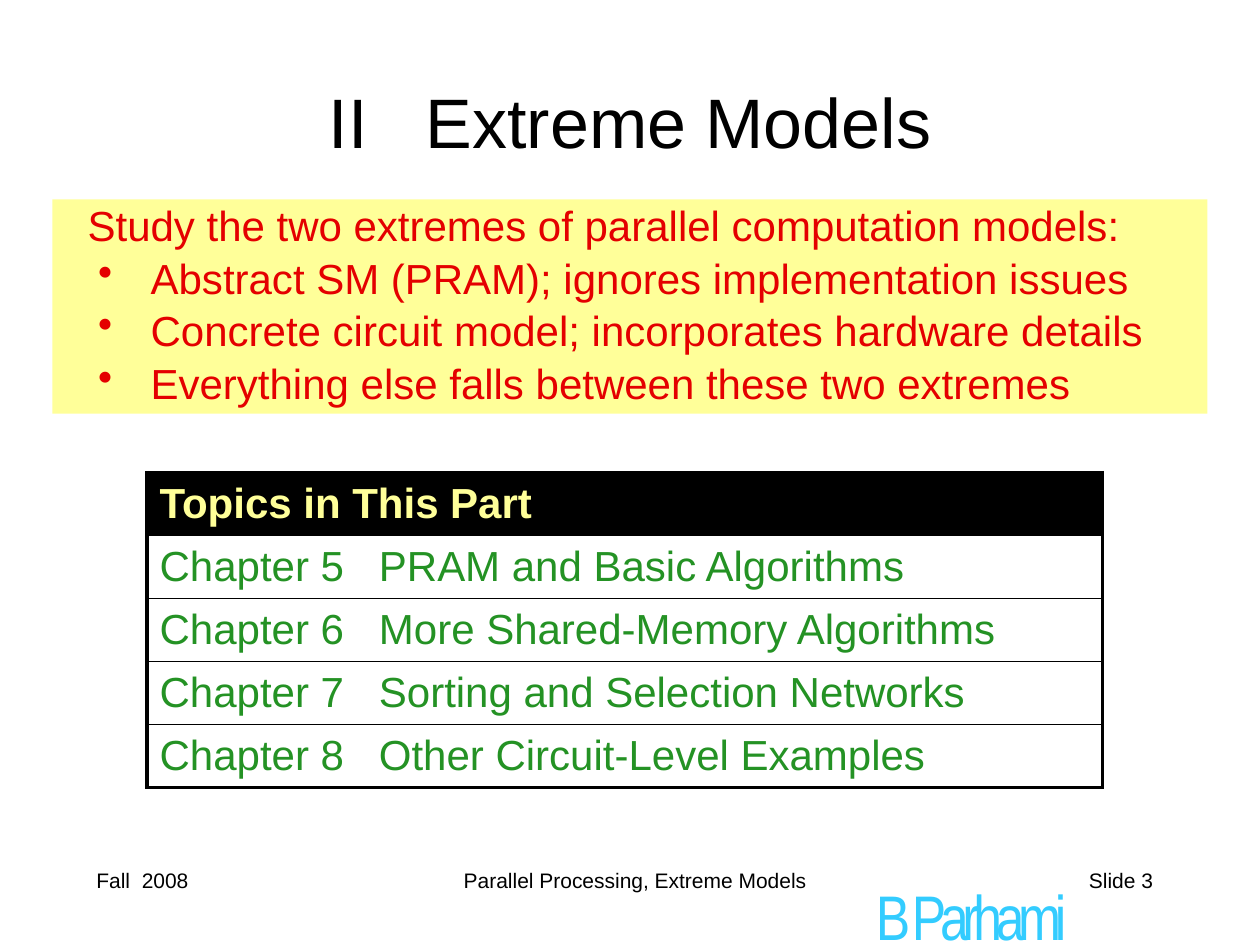
from dataclasses import dataclass

from pptx import Presentation
from pptx.dml.color import RGBColor
from pptx.enum.shapes import MSO_SHAPE
from pptx.enum.text import MSO_ANCHOR, PP_ALIGN
from pptx.oxml import parse_xml
from pptx.oxml.ns import nsdecls
from pptx.util import Pt


@dataclass(frozen=True)
class Theme:
    font: str = "Arial"
    signature_font: str = "Arial Narrow"
    black: str = "000000"
    yellow: str = "FFFF99"
    red: str = "E40000"
    green: str = "249224"
    cyan: str = "33CCFF"
    navy: str = "000099"
    title_size: float = 40
    signature_size: float = 36
    body_size: float = 24
    footer_size: float = 12
    leading: float = 1.2
    outer_line: float = 2.25
    inner_line: float = 1


def line_xml(tag, color, width):
    return parse_xml(
        f'<a:{tag} {nsdecls("a")} w="{int(Pt(width))}"><a:solidFill>'
        f'<a:srgbClr val="{color}"/></a:solidFill></a:{tag}>'
    )


class SlideBuilder:
    def __init__(self, slide, theme):
        self.slide = slide
        self.theme = theme

    def span(self, para, text, size, color, bold=False, font=None, tracking=0):
        span = para.add_run()
        span.text = text
        span.font.name = font or self.theme.font
        span.font.size = Pt(size)
        span.font.bold = bold
        span.font.color.rgb = RGBColor.from_string(color)
        if tracking:
            span.font._element.set("spc", str(round(tracking * 100)))
        return span

    def spaced_text(self, para, words, size, color, gap):
        """Write two pieces of text with a widened space between them."""
        self.span(para, words[0], size, color)
        self.span(para, " ", size, color, tracking=gap)
        self.span(para, words[1], size, color)

    def paragraph(self, frame, align=PP_ALIGN.LEFT, left=0, hanging=0):
        """Start a paragraph, reusing the empty one of a fresh frame."""
        first = frame.paragraphs[0]
        para = frame.add_paragraph() if first.runs else first
        para.alignment = align
        properties = para._p.get_or_add_pPr()
        properties.set("marL", str(Pt(left)))
        properties.set("indent", str(-Pt(hanging)))
        return para

    def text_box(self, bounds, size, align, anchor=MSO_ANCHOR.TOP):
        box = self.slide.shapes.add_textbox(*map(Pt, bounds))
        frame = box.text_frame
        frame.word_wrap = True
        frame.vertical_anchor = anchor
        para = self.paragraph(frame, align)
        para.line_spacing = Pt(size * self.theme.leading)
        return para

    def signature(self, bounds, text):
        theme = self.theme
        para = self.text_box(bounds, theme.signature_size, PP_ALIGN.CENTER)
        span = self.span(para, text, theme.signature_size, theme.cyan,
                         font=theme.signature_font, tracking=-3.6)
        span.font._element.insert(0, line_xml("ln", theme.navy, 1))

    def summary(self, bounds, heading, points):
        theme = self.theme
        panel = self.slide.shapes.add_shape(MSO_SHAPE.RECTANGLE, *map(Pt, bounds))
        panel.shadow.inherit = False
        panel.fill.solid()
        panel.fill.fore_color.rgb = RGBColor.from_string(theme.yellow)
        panel.line.fill.background()
        frame = panel.text_frame
        frame.word_wrap = True
        frame.vertical_anchor = MSO_ANCHOR.BOTTOM
        para = self.paragraph(frame, left=13)
        self.span(para, heading, theme.body_size, theme.red)
        for point in points:
            para = self.paragraph(frame, left=49, hanging=30)
            para.space_before = Pt(1.2)
            bullet = parse_xml(f'<a:buChar {nsdecls("a")} char="•"/>')
            para._p.get_or_add_pPr().append(bullet)
            self.span(para, point, theme.body_size, theme.red)

    def borders(self, cell, is_first, is_last):
        theme = self.theme
        widths = {
            "lnL": theme.outer_line,
            "lnR": theme.outer_line,
            "lnT": theme.outer_line if is_first else theme.inner_line,
            "lnB": theme.outer_line if is_last else theme.inner_line,
        }
        properties = cell._tc.get_or_add_tcPr()
        for position, (side, width) in enumerate(widths.items()):
            properties.insert(position, line_xml(side, theme.black, width))

    def topics(self, left, top, width, row_height, heading, chapters):
        theme = self.theme
        row_count = len(chapters) + 1
        frame = self.slide.shapes.add_table(
            row_count, 1, Pt(left), Pt(top), Pt(width), Pt(row_height * row_count))
        table = frame.table
        table.first_row = table.horz_banding = False
        for index in range(row_count):
            cell = table.cell(index, 0)
            cell.vertical_anchor = MSO_ANCHOR.MIDDLE
            para = self.paragraph(cell.text_frame)
            if index == 0:
                cell.fill.solid()
                cell.fill.fore_color.rgb = RGBColor.from_string(theme.black)
                self.span(para, heading, theme.body_size, theme.yellow, bold=True)
            else:
                cell.fill.background()
                self.spaced_text(para, chapters[index - 1], theme.body_size,
                                 theme.green, gap=13.3)
            self.borders(cell, index == 0, index == row_count - 1)


def main():
    theme = Theme()
    deck = Presentation()
    deck.slide_width, deck.slide_height = Pt(720), Pt(540)
    page = SlideBuilder(deck.slides.add_slide(deck.slide_layouts[6]), theme)

    page.signature((475, 498, 160, 30), "B Parhami")

    size = theme.footer_size
    date = page.text_box((48, 492, 150, 36), size, PP_ALIGN.LEFT)
    page.spaced_text(date, ("Fall", "2008"), size, theme.black, gap=3.3)
    course = page.text_box((174, 492, 378, 36), size, PP_ALIGN.CENTER)
    page.span(course, "Parallel Processing, Extreme Models", size, theme.black)
    number = page.text_box((516, 492, 150, 36), size, PP_ALIGN.RIGHT)
    page.span(number, "Slide 3", size, theme.black)

    title = page.text_box((54, 36, 612, 66), theme.title_size,
                          PP_ALIGN.CENTER, MSO_ANCHOR.MIDDLE)
    page.spaced_text(title, ("II", "Extreme Models"), theme.title_size,
                     theme.black, gap=22.2)

    page.summary(
        (30, 114, 660, 122.4),
        "Study the two extremes of parallel computation models:",
        ["Abstract SM (PRAM); ignores implementation issues",
         "Concrete circuit model; incorporates hardware details",
         "Everything else falls between these two extremes"])
    page.topics(
        84, 270, 546, 36, "Topics in This Part",
        [("Chapter 5", "PRAM and Basic Algorithms"),
         ("Chapter 6", "More Shared-Memory Algorithms"),
         ("Chapter 7", "Sorting and Selection Networks"),
         ("Chapter 8", "Other Circuit-Level Examples")])

    deck.save("out.pptx")


if __name__ == "__main__":
    main()
